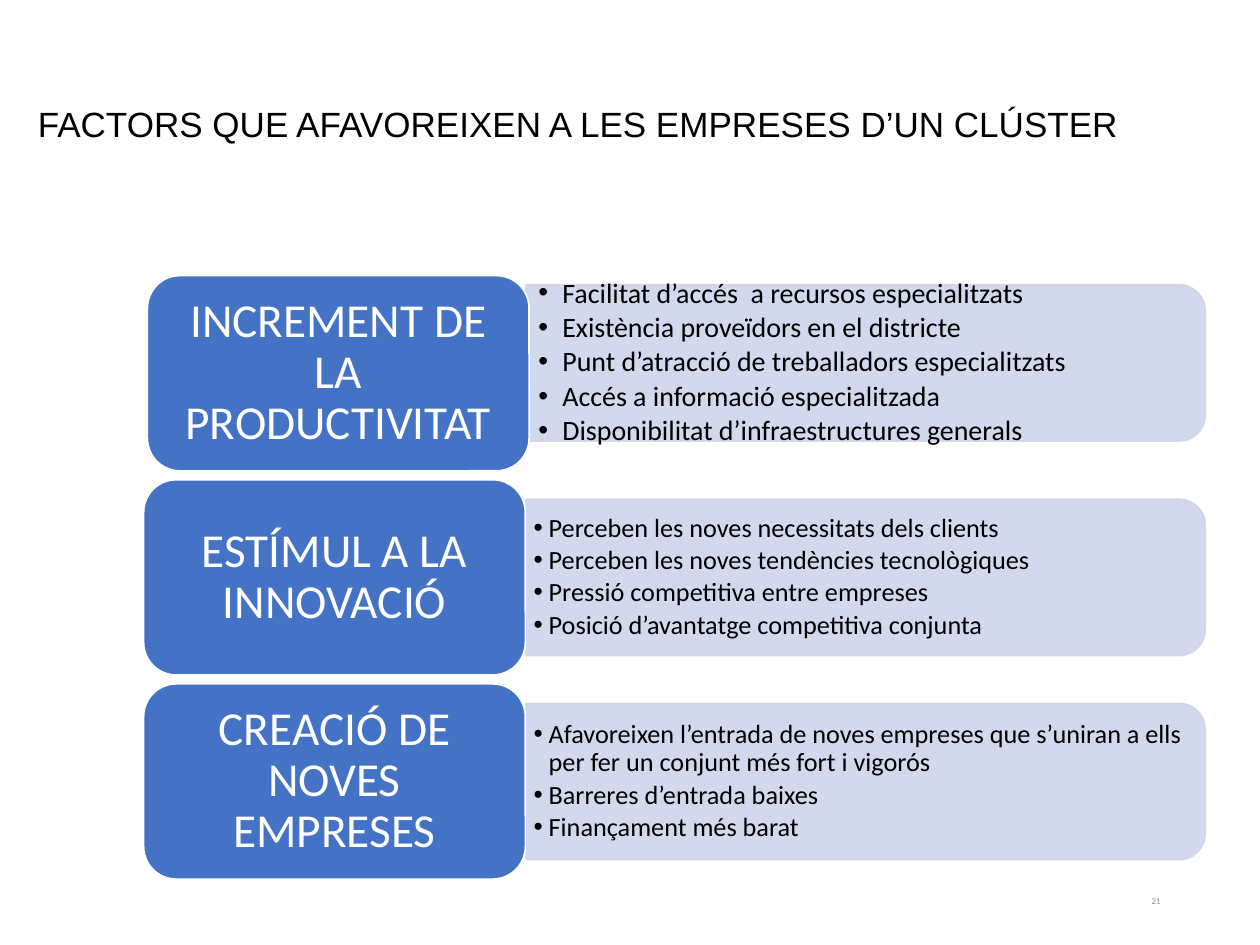
from lxml import etree
from pptx import Presentation, util as u
from pptx.dml.color import RGBColor
from pptx.enum import shapes, text
from pptx.oxml import ns

prs = Presentation()
prs.slide_width, prs.slide_height = u.Inches(10), u.Inches(7.5)
COL, ROW = prs.slide_width / 100, prs.slide_height / 100  # 100 x 100 grid
s = prs.slides.add_slide(prs.slide_layouts[5])


def paint(fmt, colour, alpha=None):
    """Set a solid colour on a fill or a font, with optional opacity in percent."""
    if hasattr(fmt, "solid"):
        fmt.solid()
        target = fmt.fore_color
    else:
        target = fmt.color
    target.rgb = RGBColor.from_string(colour)
    if alpha:
        clr = fmt._xPr.find(".//" + ns.qn("a:srgbClr"))
        etree.SubElement(clr, ns.qn("a:alpha"), val=str(alpha * 1000))


def write(p, words, size, colour, font="Calibri"):
    r = p.add_run()
    r.text = words
    r.font.name, r.font.size = font, u.Pt(size)
    paint(r.font, colour)


# Title
title = s.shapes.title
title.left, title.top = int(2 * COL), int(10.13 * ROW)
title.width, title.height = int(95.3 * COL), int(5.87 * ROW)
tf = title.text_frame
tf.word_wrap = True
tf.auto_size = text.MSO_AUTO_SIZE.SHAPE_TO_FIT_TEXT
tf.vertical_anchor = text.MSO_ANCHOR.TOP
tf.paragraphs[0].alignment = text.PP_ALIGN.LEFT
write(tf.paragraphs[0], "FACTORS QUE AFAVOREIXEN A LES EMPRESES D’UN CLÚSTER", 20, "000000", "Arial")

# Factors: label, label left, panel shift, bullet size, indent, inset, bullets
factors = [
    ("INCREMENT DE LA PRODUCTIVITAT", 11.7, -1.1, 16, 0.19, 0.1, [
        "Facilitat d’accés  a recursos especialitzats",
        "Existència proveïdors en el districte",
        "Punt d’atracció de treballadors especialitzats",
        "Accés a informació especialitzada",
        "Disponibilitat d’infraestructures generals"]),
    ("ESTÍMUL A LA INNOVACIÓ", 11.4, 0, 15, 0.12, 0.06, [
        "Perceben les noves necessitats dels clients",
        "Perceben les noves tendències tecnològiques",
        "Pressió competitiva entre empreses",
        "Posició d’avantatge competitiva conjunta"]),
    ("CREACIÓ DE NOVES EMPRESES", 11.4, 0, 15, 0.12, 0.06, [
        "Afavoreixen l’entrada de noves empreses que s’uniran a ells per fer un conjunt més fort i vigorós",
        "Barreres d’entrada baixes",
        "Finançament més barat"]),
]
FIRST, PITCH = 39.5, 21.6  # row of the first centre, step between centres
LABEL_W, LABEL_H = 30.3 * COL, 20.67 * ROW
PANEL_X, PANEL_W, PANEL_H = 41.75 * COL, 53.9 * COL, 16.53 * ROW
TEXT_W, TEXT_H = 53.3 * COL, 14.93 * ROW

for i, (label, left, shift, size, indent, inset, bullets) in enumerate(factors):
    middle = (FIRST + i * PITCH) * ROW
    panel_middle = middle + shift * ROW

    # Panel, turned so that its rounded end faces right
    panel = s.shapes.add_shape(
        shapes.MSO_SHAPE.ROUND_2_SAME_RECTANGLE,
        int(PANEL_X + (PANEL_W - PANEL_H) / 2), int(panel_middle - PANEL_W / 2),
        int(PANEL_H), int(PANEL_W))
    panel.rotation = 90
    panel.shadow.inherit = False
    panel.line.width = u.Pt(1)
    paint(panel.fill, "CFD5EA", 90)
    paint(panel.line.fill, "CFD5EA", 90)

    # Bullets
    tf = s.shapes.add_textbox(int(PANEL_X), int(panel_middle - TEXT_H / 2),
                              int(TEXT_W), int(TEXT_H)).text_frame
    tf.word_wrap = True
    tf.vertical_anchor = text.MSO_ANCHOR.MIDDLE
    tf.margin_left = tf.margin_right = u.Inches(inset)
    tf.margin_top = tf.margin_bottom = u.Inches(inset / 2)
    for n, words in enumerate(bullets):
        p = tf.add_paragraph() if n else tf.paragraphs[0]
        p.level = 1
        p.line_spacing, p.space_after = 0.9, u.Pt(0.15 * size)
        pPr = p._p.get_or_add_pPr()
        pPr.set("marL", str(u.Inches(indent)))
        pPr.set("indent", str(-u.Inches(indent)))
        etree.SubElement(pPr, ns.qn("a:buFont"), typeface="Arial")
        etree.SubElement(pPr, ns.qn("a:buChar"), char="•")
        write(p, words, size, "000000")

    # Label
    box = s.shapes.add_shape(
        shapes.MSO_SHAPE.ROUNDED_RECTANGLE, int(left * COL),
        int(middle - LABEL_H / 2), int(LABEL_W), int(LABEL_H))
    box.shadow.inherit = False
    box.line.width = u.Pt(1)
    paint(box.fill, "4472C4")
    paint(box.line.fill, "FFFFFF")
    tf = box.text_frame
    tf.word_wrap = True
    tf.vertical_anchor = text.MSO_ANCHOR.MIDDLE
    tf.margin_left = tf.margin_right = u.Inches(0.11)
    tf.margin_top = tf.margin_bottom = u.Inches(0.06)
    p = tf.paragraphs[0]
    p.alignment, p.line_spacing = text.PP_ALIGN.CENTER, 0.9
    p.space_after = u.Pt(0.35 * 27)
    write(p, label, 27, "FFFFFF")

# Slide number
tf = s.shapes.add_textbox(int(70.6 * COL), int(92.67 * ROW),
                          int(22.5 * COL), int(5.33 * ROW)).text_frame
tf.word_wrap = True
tf.vertical_anchor = text.MSO_ANCHOR.MIDDLE
tf.paragraphs[0].alignment = text.PP_ALIGN.RIGHT
write(tf.paragraphs[0], "21", 5.1, "8C8C8C")

prs.save("out.pptx")
